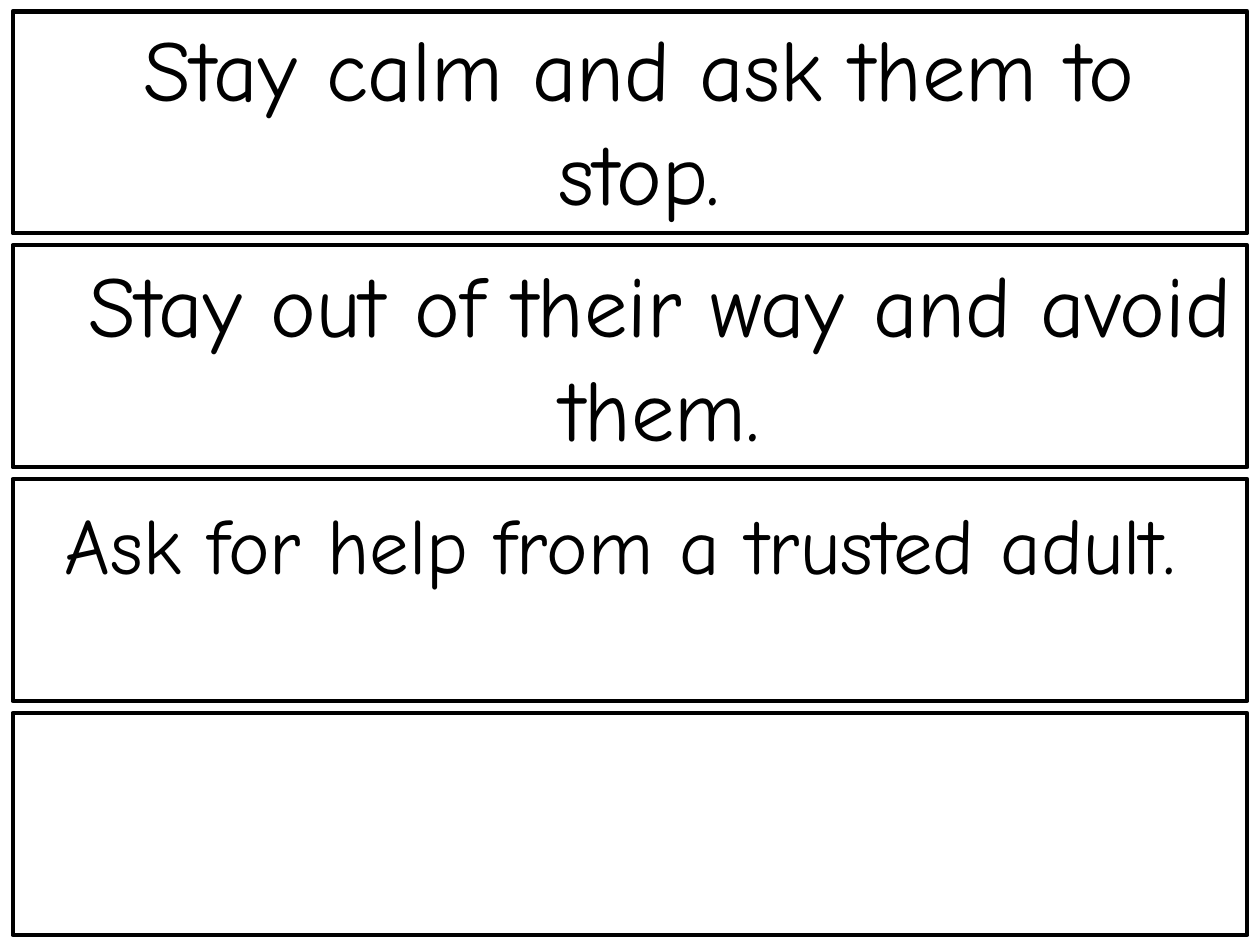
from dataclasses import dataclass

from pptx import Presentation
from pptx.dml.color import RGBColor
from pptx.enum.shapes import MSO_SHAPE as Shape
from pptx.enum.text import MSO_AUTO_SIZE as AutoSize, PP_ALIGN as Align
from pptx.slide import Slide
from pptx.util import Inches, Pt

COLORS = {"paper": "FFFFFF", "ink": "000000"}
FONT = "Comic Neue"
STRIP_COUNT = 4
STRIP_LEFT, STRIP_TOP = 0.18, 0.16
STRIP_WIDTH, STRIP_HEIGHT = 17.42, 3.13
STRIP_PITCH = 3.3


@dataclass(frozen=True)
class Strategy:
    text: str
    left: float
    top: float
    width: float
    height: float
    size: int


STRATEGIES = [
    Strategy("Stay calm and ask them to stop.", 0.6, 0.16, 16.83, 3.06, 88),
    Strategy("Stay out of their way and avoid them.", 0.6, 3.49, 17.42, 3.06, 88),
    Strategy("Ask for help from a trusted adult.", -0.09, 6.95, 17.69, 2.79, 80),
]


def color(name: str) -> RGBColor:
    return RGBColor.from_string(COLORS[name])


def draw_strip(page: Slide, index: int) -> None:
    strip = page.shapes.add_shape(
        Shape.RECTANGLE,
        Inches(STRIP_LEFT),
        Inches(STRIP_TOP + index * STRIP_PITCH),
        Inches(STRIP_WIDTH),
        Inches(STRIP_HEIGHT),
    )
    strip.shadow.inherit = False
    strip.fill.solid()
    strip.fill.fore_color.rgb = color("paper")
    strip.line.color.rgb = color("ink")
    strip.line.width = Pt(4.5)


def draw_strategy(page: Slide, strategy: Strategy) -> None:
    box = page.shapes.add_textbox(
        Inches(strategy.left),
        Inches(strategy.top),
        Inches(strategy.width),
        Inches(strategy.height),
    )
    frame = box.text_frame
    frame.word_wrap = True
    frame.auto_size = AutoSize.SHAPE_TO_FIT_TEXT
    frame.text = strategy.text
    para = frame.paragraphs[0]
    para.alignment = Align.CENTER
    span = para.runs[0]
    span.font.name = FONT
    span.font.size = Pt(strategy.size)
    span.font.color.rgb = color("ink")


def main() -> None:
    deck = Presentation()
    deck.slide_width, deck.slide_height = Inches(17.78), Inches(13.33)
    page = deck.slides.add_slide(deck.slide_layouts[6])
    for index in range(STRIP_COUNT):
        draw_strip(page, index)
    for strategy in STRATEGIES:
        draw_strategy(page, strategy)
    deck.save("out.pptx")


if __name__ == "__main__":
    main()
